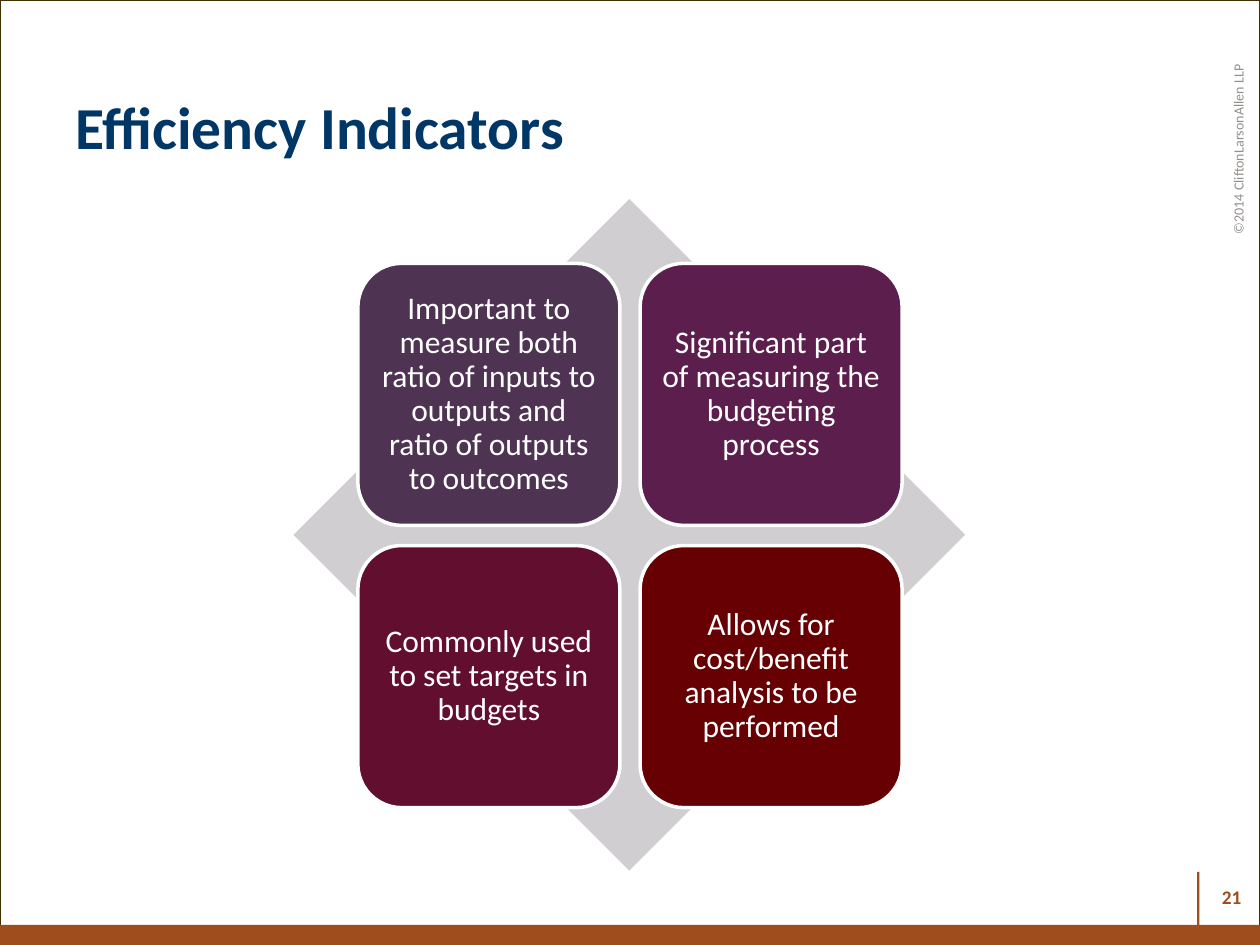
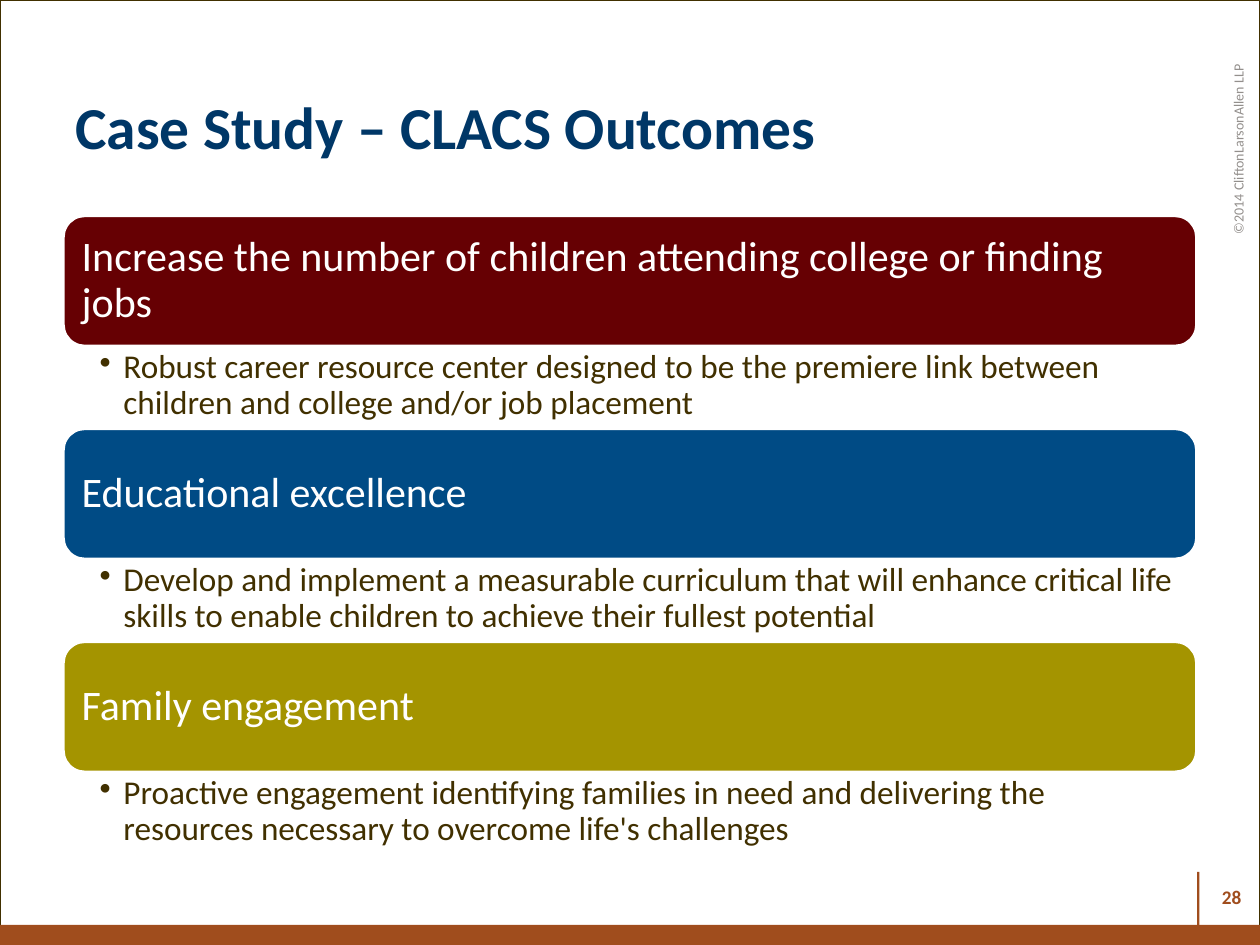
"""Build two slides on efficiency indicators and case study outcomes."""
from lxml.etree import SubElement
from pptx import Presentation
from pptx.dml.color import RGBColor
from pptx.enum.shapes import MSO_SHAPE
from pptx.enum.text import MSO_ANCHOR, PP_ALIGN
from pptx.oxml.ns import qn
from pptx.util import Inches, Pt

FONT = "Calibri"
WHITE, NAVY, RUST, BROWN, GREY = "FFFFFF", "003767", "A04D1D", "413000", "938F8C"
MAROON, PALE_GREY = "660003", "D0CED1"
rgb = RGBColor.from_string


def add_block(slide, kind, left, top, width, height, fill=None, line=None, weight=2):
    block = slide.shapes.add_shape(
        kind, Inches(left), Inches(top), Inches(width), Inches(height))
    block.shadow.inherit = False
    if fill:
        block.fill.solid()
        block.fill.fore_color.rgb = rgb(fill)
    else:
        block.fill.background()
    if line:
        block.line.color.rgb = rgb(line)
        block.line.width = Pt(weight)
    else:
        block.line.fill.background()
    return block


def write(shape, text, size, color, bold=False, align=PP_ALIGN.LEFT,
          anchor=MSO_ANCHOR.MIDDLE, insets=(0.1, 0.05, 0.1, 0.05),
          spacing=1.0, bullet_indent=None):
    frame = shape.text_frame
    frame.word_wrap = True
    frame.vertical_anchor = anchor
    (frame.margin_left, frame.margin_top,
     frame.margin_right, frame.margin_bottom) = map(Inches, insets)
    paragraph = frame.paragraphs[0]
    if bullet_indent:
        properties = paragraph._p.get_or_add_pPr()
        properties.set("marL", str(Inches(bullet_indent)))
        properties.set("indent", str(-Inches(bullet_indent)))
        SubElement(properties, qn("a:buChar"), char="•")
    paragraph.alignment = align
    paragraph.line_spacing = spacing
    run = paragraph.add_run()
    run.text = text
    run.font.name = FONT
    run.font.size = Pt(size)
    run.font.bold = bold
    run.font.color.rgb = rgb(color)


deck = Presentation()
deck.slide_width, deck.slide_height = Inches(10), Inches(7.5)

pages = []
for heading, number in (("Efficiency Indicators", "21"),
                        ("Case Study – CLACS Outcomes", "28")):
    page = deck.slides.add_slide(deck.slide_layouts[6])
    add_block(page, MSO_SHAPE.RECTANGLE, 0, 0, 10, 7.5, line=BROWN, weight=0.75)
    copyright_line = page.shapes.add_textbox(
        Inches(8.66), Inches(1.41), Inches(2.33), Inches(0.34))
    copyright_line.rotation = 270
    write(copyright_line, "©2014 CliftonLarsonAllen LLP", 8, GREY, align=PP_ALIGN.RIGHT)
    add_block(page, MSO_SHAPE.RECTANGLE, 0, 7.34, 10, 0.16, fill=RUST)
    add_block(page, MSO_SHAPE.RECTANGLE, 9.5, 6.92, 0.02, 0.58, fill=RUST)
    title = page.shapes.add_textbox(Inches(0.5), Inches(0.5), Inches(9), Inches(1))
    write(title, heading, 34, NAVY, bold=True)
    page_number = page.shapes.add_textbox(
        Inches(9.4), Inches(6.92), Inches(0.55), Inches(0.4))
    write(page_number, number, 11, RUST, bold=True, align=PP_ALIGN.RIGHT)
    pages.append(page)

indicators_page, outcomes_page = pages

add_block(indicators_page, MSO_SHAPE.DIAMOND, 2.33, 1.58, 5.33, 5.33, fill=PALE_GREY)
indicators = [
    ("Important to measure both ratio of inputs to outputs and ratio of outputs to outcomes",
     "4F3353"),
    ("Significant part of measuring the budgeting process", "5C1F4D"),
    ("Commonly used to set targets in budgets", "620E2F"),
    ("Allows for cost/benefit analysis to be performed", MAROON),
]
TILE, TILE_PITCH = 2.08, 2.24
for index, (indicator, color) in enumerate(indicators):
    row, column = divmod(index, 2)
    tile = add_block(indicators_page, MSO_SHAPE.ROUNDED_RECTANGLE,
                     2.84 + column * TILE_PITCH, 2.09 + row * TILE_PITCH,
                     TILE, TILE, fill=color, line=WHITE)
    write(tile, indicator, 18, WHITE, align=PP_ALIGN.CENTER,
          insets=(0.07, 0.07, 0.07, 0.07), spacing=0.9)

outcomes = [
    ("Increase the number of children attending college or finding jobs", MAROON,
     "Robust career resource center designed to be the premiere link between "
     "children and college and/or job placement"),
    ("Educational excellence", "004B85",
     "Develop and implement a measurable curriculum that will enhance critical life "
     "skills to enable children to achieve their fullest potential"),
    ("Family engagement", "A49400",
     "Proactive engagement identifying families in need and delivering the "
     "resources necessary to overcome life's challenges"),
]
BAR_HEIGHT, DETAIL_HEIGHT = 1.04, 0.65
for index, (outcome, color, explanation) in enumerate(outcomes):
    top = 1.71 + index * (BAR_HEIGHT + DETAIL_HEIGHT)
    bar = add_block(outcomes_page, MSO_SHAPE.ROUNDED_RECTANGLE,
                    0.5, top, 9, BAR_HEIGHT, fill=color, line=WHITE)
    write(bar, outcome, 24, WHITE, insets=(0.1, 0.1, 0.1, 0.1), spacing=0.9)
    detail = outcomes_page.shapes.add_textbox(
        Inches(0.5), Inches(top + BAR_HEIGHT), Inches(9), Inches(DETAIL_HEIGHT))
    write(detail, explanation, 19, BROWN, anchor=MSO_ANCHOR.TOP,
          insets=(0.29, 0.03, 0.19, 0.03), spacing=0.9, bullet_indent=0.19)

deck.save("out.pptx")
